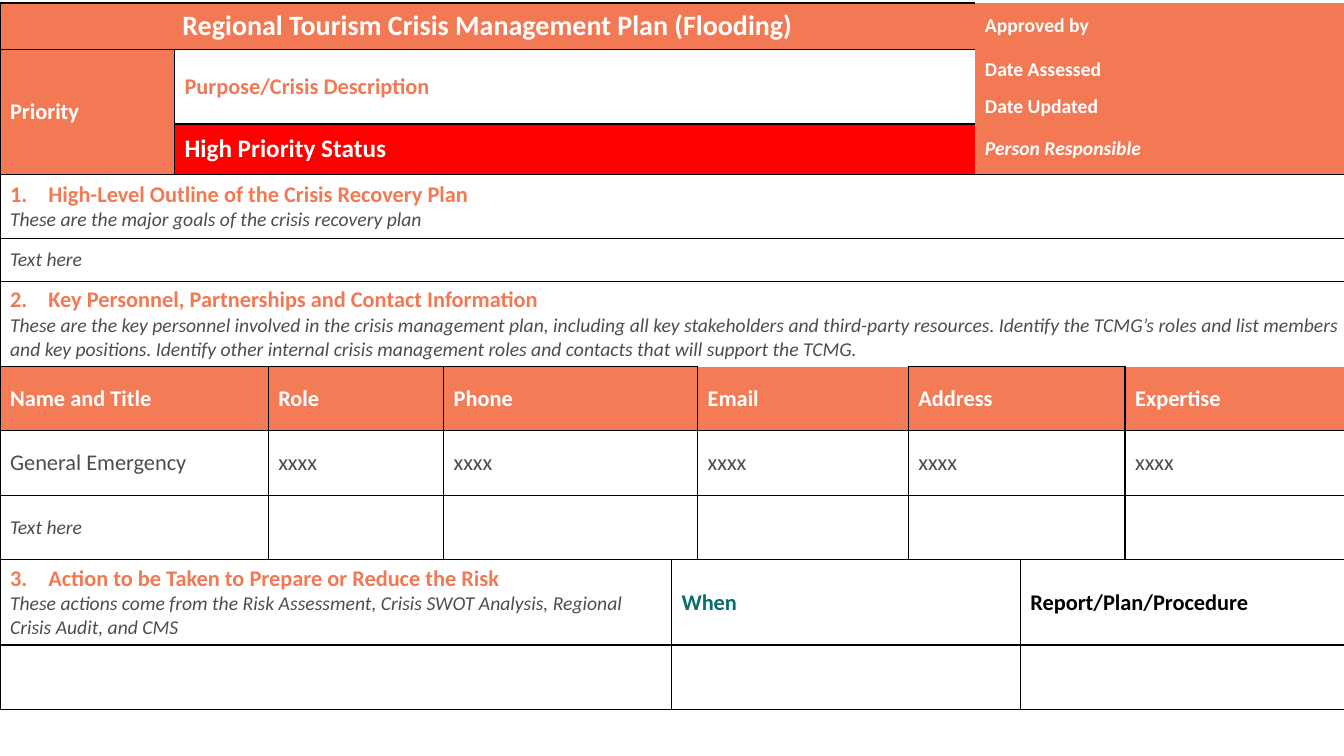
import pptx
import pptx.dml.color
import pptx.enum.text
import pptx.oxml
import pptx.oxml.ns
import pptx.util

COLORS = {
    "orange": "F27954",
    "header": "F37C57",
    "red": "FF0000",
    "teal": "086D6E",
    "gray": "4D4D4D",
    "white": "FFFFFF",
    "black": "000000",
}
COLUMN_WIDTHS = [1.73, 0.93, 1.74, 2.26, 0.26, 2.09, 0.66, 0.45, 1.04, 2.41]
ROW_HEIGHTS = [0.46, 0.4, 0.34, 0, 0.5, 0.64, 0.42, 0.84, 0.64, 0.64, 0.64, 0.84, 0.64]
PERSONNEL_COLUMNS = [(0, 2), (2, 1), (3, 2), (5, 1), (6, 3), (9, 1)]
ACTION_COLUMNS = [(0, 4), (4, 4), (8, 2)]
ALL_SIDES = {side: "black" for side in "LRTB"}
OPEN_RIGHT = {side: "black" for side in "LTB"}
OPEN_BOTTOM = {side: "black" for side in "LRT"}
WHITE_TOP = {**ALL_SIDES, "T": "white"}


def rgb(name):
    """Return the named colour."""
    return pptx.dml.color.RGBColor.from_string(COLORS[name])


def write_text(paragraph, text, size=16, color="white", bold=True, italic=False, centered=False):
    """Write one formatted run into a paragraph."""
    if centered:
        paragraph.alignment = pptx.enum.text.PP_ALIGN.CENTER
    run = paragraph.add_run()
    run.text = text
    run.font.name = "Calibri"
    run.font.size = pptx.util.Pt(size)
    run.font.bold = bold
    run.font.italic = italic
    run.font.color.rgb = rgb(color)


def draw_borders(cell, borders):
    """Draw the listed sides of a cell and hide the others."""
    properties = cell._tc.get_or_add_tcPr()
    namespace = pptx.oxml.ns.nsdecls("a")
    for index, side in enumerate("LRTB"):
        paint = "<a:noFill/>"
        if side in borders:
            color = COLORS[borders[side]]
            paint = f'<a:solidFill><a:srgbClr val="{color}"/></a:solidFill>'
        line = pptx.oxml.parse_xml(f'<a:ln{side} {namespace} w="12700">{paint}</a:ln{side}>')
        properties.insert(index, line)


def place_cell(table, row, column, rows=1, columns=1, text="", fill="white",
               borders=ALL_SIDES, **text_format):
    """Merge a block of cells, paint it and return its main cell."""
    last_row, last_column = row + rows - 1, column + columns - 1
    main_cell = table.cell(row, column)
    if rows * columns > 1:
        main_cell.merge(table.cell(last_row, last_column))
    for r in range(row, last_row + 1):
        for c in range(column, last_column + 1):
            cell = table.cell(r, c)
            cell.fill.solid()
            cell.fill.fore_color.rgb = rgb(fill)
            outer = {"L": c == column, "R": c == last_column, "T": r == row, "B": r == last_row}
            draw_borders(cell, {side: color for side, color in borders.items() if outer[side]})
    main_cell.vertical_anchor = pptx.enum.text.MSO_ANCHOR.MIDDLE
    if text:
        write_text(main_cell.text_frame.paragraphs[0], text, **text_format)
    return main_cell


def place_section(table, row, number, heading, note, columns=10, borders=ALL_SIDES):
    """Place a numbered heading with an explanatory note below it."""
    cell = place_cell(table, row, 0, columns=columns, borders=borders)
    paragraph = cell.text_frame.paragraphs[0]
    properties = paragraph._p.get_or_add_pPr()
    indent = pptx.util.Inches(0.38)
    properties.set("marL", str(indent))
    properties.set("indent", str(-indent))
    namespace = pptx.oxml.ns.nsdecls("a")
    properties.append(pptx.oxml.parse_xml(f'<a:buFont {namespace} typeface="+mj-lt"/>'))
    properties.append(pptx.oxml.parse_xml(
        f'<a:buAutoNum {namespace} type="arabicPeriod" startAt="{number}"/>'))
    write_text(paragraph, heading, color="orange")
    write_text(cell.text_frame.add_paragraph(), note, size=14, color="gray",
               bold=False, italic=True)


def place_plan_header(table, row):
    """Place the title, priority and approval block."""
    place_cell(table, row, 0, columns=7, text="Regional Tourism Crisis Management Plan (Flooding)",
               fill="orange", borders=OPEN_RIGHT, size=20, centered=True)
    place_cell(table, row + 1, 0, rows=4, text="Priority", fill="orange")
    place_cell(table, row + 1, 1, rows=3, columns=6, text="Purpose/Crisis Description",
               borders=OPEN_RIGHT, color="orange")
    place_cell(table, row + 4, 1, columns=6, text="High Priority Status", fill="red",
               borders=OPEN_RIGHT, size=18)
    for offset, label in enumerate(["Approved by", "Date Assessed", "Date Updated"]):
        place_cell(table, row + offset, 7, columns=3, text=label, fill="orange",
                   borders={}, size=14)
    place_cell(table, row + 3, 7, rows=2, columns=3, text="Person Responsible", fill="orange",
               borders={"B": "black"}, size=14, italic=True)


def place_outline(table, row):
    """Place the outline section and its entry row."""
    place_section(table, row, 1, "High-Level Outline of the Crisis Recovery Plan",
                  "These are the major goals of the crisis recovery plan")
    place_cell(table, row + 1, 0, columns=10, text="Text here", size=14, color="gray",
               bold=False, italic=True)


def place_personnel(table, row):
    """Place the personnel section with its contact grid."""
    place_section(
        table, row, 2, "Key Personnel, Partnerships and Contact Information",
        "These are the key personnel involved in the crisis management plan, including all key "
        "stakeholders and third-party resources. Identify the TCMG’s roles and list members "
        "and key positions. Identify other internal crisis management roles and contacts that "
        "will support the TCMG.", borders=OPEN_BOTTOM)
    labels = ["Name and Title", "Role", "Phone", "Email", "Address", "Expertise"]
    for (column, columns), label in zip(PERSONNEL_COLUMNS, labels):
        first = column == 0
        borders = WHITE_TOP if label in ("Email", "Expertise") else ALL_SIDES
        place_cell(table, row + 1, column, columns=columns, text=label, fill="header",
                   borders=borders)
        place_cell(table, row + 2, column, columns=columns, color="gray", bold=False,
                   text="General Emergency" if first else "xxxx")
        place_cell(table, row + 3, column, columns=columns, text="Text here" if first else "",
                   size=14, color="gray", bold=False, italic=True)


def place_actions(table, row):
    """Place the action section and its empty entry row."""
    place_section(table, row, 3, "Action to be Taken to Prepare or Reduce the Risk",
                  "These actions come from the Risk Assessment, Crisis SWOT Analysis, "
                  "Regional Crisis Audit, and CMS", columns=4)
    place_cell(table, row, 4, columns=4, text="When", color="teal")
    place_cell(table, row, 8, columns=2, text="Report/Plan/Procedure", color="black")
    for column, columns in ACTION_COLUMNS:
        place_cell(table, row + 1, column, columns=columns)


def place_plan(slide, left, top, width, height):
    """Place the whole plan table in the given box."""
    frame = slide.shapes.add_table(len(ROW_HEIGHTS), len(COLUMN_WIDTHS), left, top, width, height)
    table = frame.table
    table.first_row = False
    table.horz_banding = False
    for column, size in zip(table.columns, COLUMN_WIDTHS):
        column.width = pptx.util.Inches(size)
    for row, size in zip(table.rows, ROW_HEIGHTS):
        row.height = pptx.util.Inches(size)
    place_plan_header(table, 0)
    place_outline(table, 5)
    place_personnel(table, 7)
    place_actions(table, 11)


def main():
    """Build and save the presentation."""
    presentation = pptx.Presentation()
    presentation.slide_width = pptx.util.Inches(13.33)
    presentation.slide_height = pptx.util.Inches(7.5)
    slide = presentation.slides.add_slide(presentation.slide_layouts[6])
    place_plan(slide, 0, pptx.util.Inches(0.03), pptx.util.Inches(sum(COLUMN_WIDTHS)),
               pptx.util.Inches(sum(ROW_HEIGHTS)))
    presentation.save("out.pptx")


if __name__ == "__main__":
    main()
